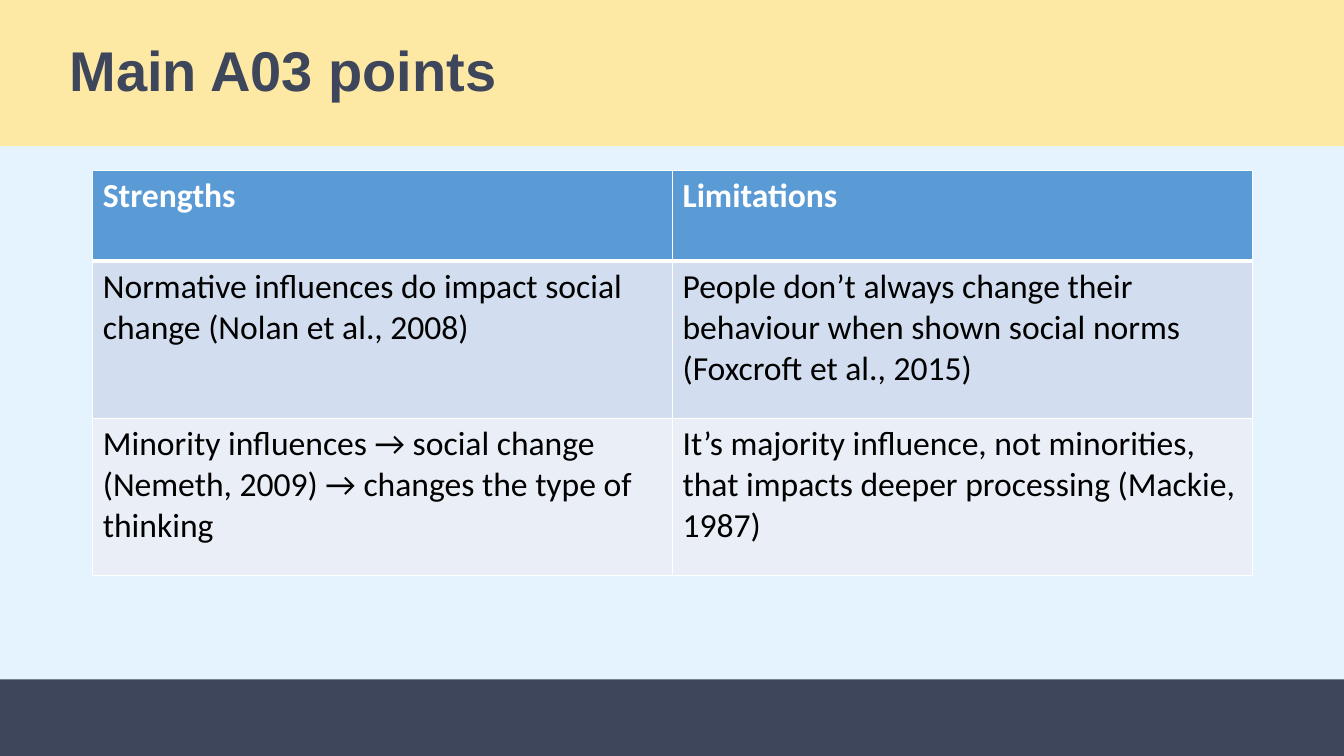
from lxml import etree
from pptx import Presentation
from pptx.dml.color import RGBColor
from pptx.enum.shapes import MSO_SHAPE as Shape
from pptx.enum.text import MSO_ANCHOR as Anchor, PP_ALIGN as Align
from pptx.oxml.ns import qn
from pptx.util import Inches, Pt

TITLE = "Main A03 points"
ROWS = [
    ("Strengths", "Limitations"),
    ("Normative influences do impact social change (Nolan et al., 2008)",
     "People don’t always change their behaviour when shown social norms (Foxcroft et al., 2015)"),
    ("Minority influences → social change (Nemeth, 2009) → changes the type of thinking",
     "It’s majority influence, not minorities, that impacts deeper processing (Mackie, 1987)"),
]
COLORS = {"sky": "E5F3FF", "navy": "3D465A", "yellow": "FEE9A4", "white": "FFFFFF",
          "black": "000000", "header": "5B9BD5", "band": "D2DEEF", "light": "EAEFF7"}
ROW_FILLS = ["header", "band", "light"]
ROW_HEIGHTS = [0.9, 1.56, 1.56]
COLUMN_WIDTH = 5.75
TITLE_FONT = {"name": "Arial", "size": Pt(40), "bold": True}
HEADER_FONT = {"name": "Calibri", "size": Pt(24), "bold": True}
BODY_FONT = {**HEADER_FONT, "bold": False}


def color(name):
    return RGBColor.from_string(COLORS[name])


def paint(fill, name):
    fill.solid()
    fill.fore_color.rgb = color(name)


def style(para, font, name):
    for key, value in font.items():
        setattr(para.font, key, value)
    para.font.color.rgb = color(name)


def add_borders(cell, bottom_width, top_width):
    props = cell._tc.get_or_add_tcPr()
    widths = {"lnL": 1, "lnR": 1, "lnT": top_width, "lnB": bottom_width}
    for index, (side, width) in enumerate(widths.items()):
        line = etree.Element(qn(f"a:{side}"), w=str(Pt(width)))
        solid = etree.SubElement(line, qn("a:solidFill"))
        etree.SubElement(solid, qn("a:srgbClr"), val=COLORS["white"])
        props.insert(index, line)


deck = Presentation()
deck.slide_width, deck.slide_height = Inches(13.33), Inches(7.5)
page = deck.slides.add_slide(deck.slide_layouts[5])
paint(page.background.fill, "sky")

# Footer band
footer = page.shapes.add_shape(Shape.RECTANGLE, 0, Inches(6.74), deck.slide_width, Inches(0.76))
footer.shadow.inherit = False
paint(footer.fill, "navy")
footer.line.fill.background()

# Title band
title = page.shapes.title
title.left, title.top, title.width, title.height = 0, 0, deck.slide_width, Inches(1.45)
paint(title.fill, "yellow")
title.text_frame.text = TITLE
title.text_frame.vertical_anchor = Anchor.MIDDLE
para = title.text_frame.paragraphs[0]
para.alignment = Align.LEFT
para.line_spacing = 0.9
para._p.get_or_add_pPr().set("marL", str(Inches(0.59)))
style(para, TITLE_FONT, "navy")

# Strengths and limitations table
table = page.shapes.add_table(
    len(ROWS), len(ROWS[0]), Inches(0.92), Inches(1.69),
    Inches(COLUMN_WIDTH * len(ROWS[0])), Inches(sum(ROW_HEIGHTS))).table
for column in table.columns:
    column.width = Inches(COLUMN_WIDTH)
for r, texts in enumerate(ROWS):
    table.rows[r].height = Inches(ROW_HEIGHTS[r])
    for c, text in enumerate(texts):
        cell = table.cell(r, c)
        cell.text = text
        paint(cell.fill, ROW_FILLS[r])
        add_borders(cell, bottom_width=3 if r == 0 else 1, top_width=3 if r == 1 else 1)
        style(cell.text_frame.paragraphs[0], BODY_FONT if r else HEADER_FONT,
              "black" if r else "white")

deck.save("out.pptx")
